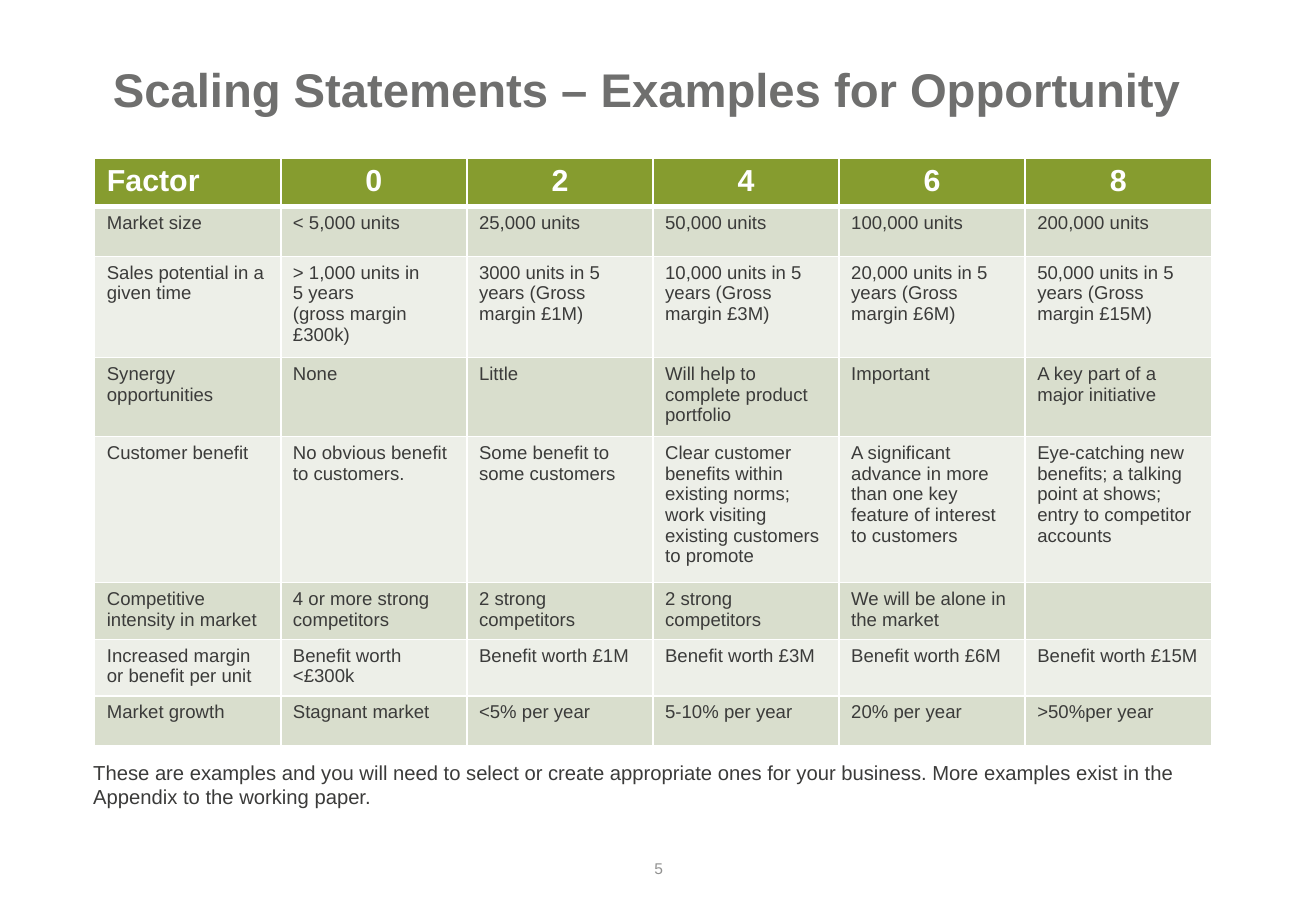
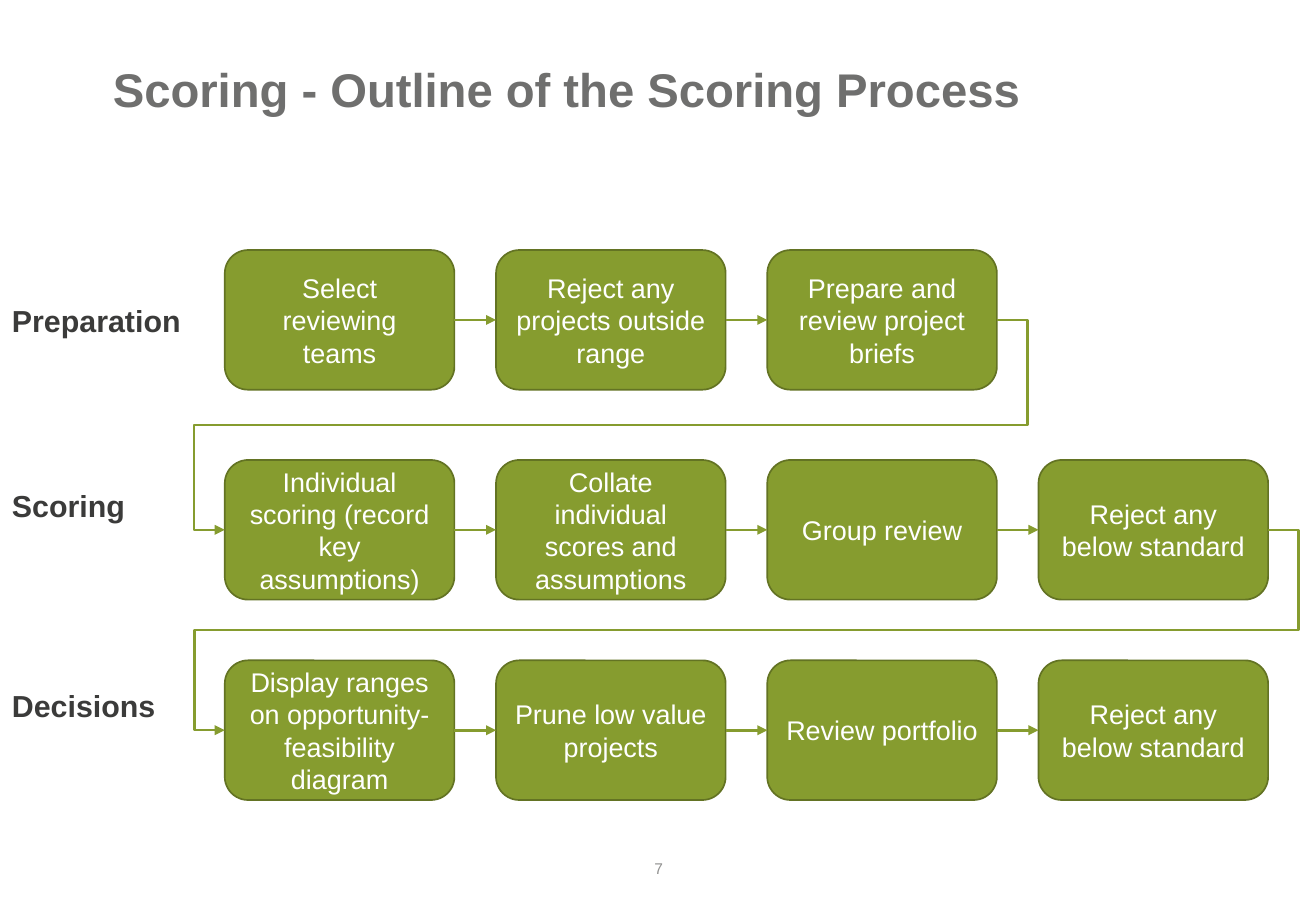
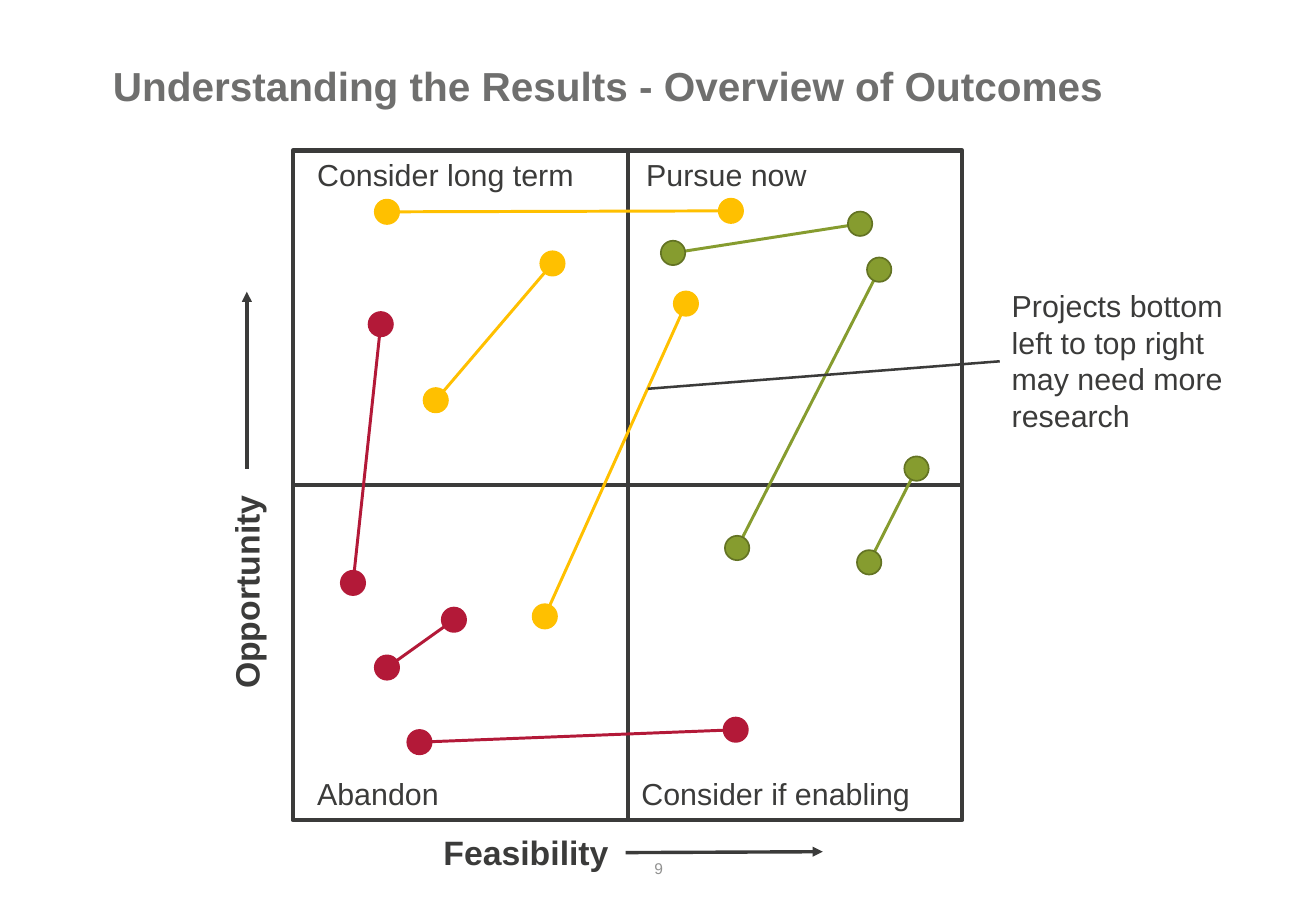
"""Build three slides on scoring projects by opportunity and feasibility."""
import math
from dataclasses import dataclass

import pptx
import pptx.dml.color
import pptx.enum.shapes
import pptx.enum.text
import pptx.oxml
import pptx.oxml.ns
import pptx.presentation
import pptx.shapes.autoshape
import pptx.shapes.base
import pptx.shapes.connector
import pptx.slide
import pptx.table
import pptx.text.text
import pptx.util

Cm = pptx.util.Cm
Pt = pptx.util.Pt
Align = pptx.enum.text.PP_ALIGN
Anchor = pptx.enum.text.MSO_ANCHOR
Preset = pptx.enum.shapes.MSO_SHAPE
Route = pptx.enum.shapes.MSO_CONNECTOR
qn = pptx.oxml.ns.qn

FONT = "Arial"
GREEN, DARK_GREEN = "869C2F", "637323"
AMBER, RED = "FFC000", "B31938"
INK, TITLE_GREY, NUMBER_GREY, WHITE = "3B3B3A", "6F6F6E", "929291", "FFFFFF"
BANDS = ("EDEFE8", "D9DECD")
TOP, LEFT, BOTTOM, RIGHT = range(4)
SITES = ((0.5, 0), (0, 0.5), (0.5, 1), (1, 0.5))


@dataclass(frozen=True)
class TextStyle:
    size: float
    colour: str = INK
    bold: bool = False
    align: Align = Align.LEFT


@dataclass(frozen=True)
class Stroke:
    colour: str
    width: float
    arrow: bool = False


@dataclass(frozen=True)
class Label:
    text: str
    left: float
    top: float
    width: float
    height: float
    style: TextStyle
    rotation: float = 0


@dataclass(frozen=True)
class Stage:
    name: str
    label_top: float
    box_top: float
    steps: tuple[str, ...]


@dataclass(frozen=True)
class Project:
    colour: str
    low: tuple[float, float]
    high: tuple[float, float]


HEADER = TextStyle(18, WHITE, True)
HEADER_CENTRED = TextStyle(18, WHITE, True, Align.CENTER)
CELL = TextStyle(11)
STEP = TextStyle(16, WHITE, align=Align.CENTER)
STAGE_NAME = TextStyle(18, bold=True)
QUADRANT = TextStyle(18)
AXIS = TextStyle(20, bold=True)
PAGE_NUMBER = TextStyle(9.2, NUMBER_GREY, align=Align.CENTER)

COLUMN_WIDTH = 3.89
ROW_HEIGHTS = (1.02, 1.04, 1.97, 1.56, 2.84, 1.12, 1.12, 1.04)
FACTORS = (
    ("Factor", "0", "2", "4", "6", "8"),
    ("Market size", "< 5,000 units", "25,000 units", "50,000 units",
     "100,000 units", "200,000 units"),
    ("Sales potential in a given time",
     "> 1,000 units in\n5 years\n(gross margin\n£300k)",
     "3000 units in 5 years (Gross margin £1M)",
     "10,000 units in 5 years (Gross margin £3M)",
     "20,000 units in 5 years (Gross margin £6M)",
     "50,000 units in 5 years (Gross margin £15M)"),
    ("Synergy opportunities", "None", "Little",
     "Will help to complete product portfolio", "Important",
     "A key part of a major initiative"),
    ("Customer benefit", "No obvious benefit to customers.",
     "Some benefit to some customers",
     "Clear customer benefits within existing norms; "
     "work visiting existing customers to promote",
     "A significant advance in more than one key feature "
     "of interest to customers",
     "Eye-catching new benefits; a talking point at shows; "
     "entry to competitor accounts"),
    ("Competitive intensity in market", "4 or more strong competitors",
     "2 strong competitors", "2 strong competitors",
     "We will be alone in the market", ""),
    ("Increased margin or benefit per unit", "Benefit worth <£300k",
     "Benefit worth £1M", "Benefit worth £3M", "Benefit worth £6M",
     "Benefit worth £15M"),
    ("Market growth", "Stagnant market", "<5% per year", "5-10% per year",
     "20% per year", ">50%per year"),
)

STEP_LEFT, STEP_PITCH, STEP_WIDTH, STEP_HEIGHT = 4.7, 5.67, 4.8, 2.92
ELBOW_STUB = 0.64
STAGES = (
    Stage("Preparation", 6.2, 5.23,
          ("Select reviewing teams", "Reject any projects outside range",
           "Prepare and review project briefs")),
    Stage("Scoring", 10.06, 9.62,
          ("Individual scoring (record key assumptions)",
           "Collate individual scores and assumptions", "Group review",
           "Reject any below standard")),
    Stage("Decisions", 14.25, 13.81,
          ("Display ranges on opportunity-feasibility diagram",
           "Prune low value projects", "Review portfolio",
           "Reject any below standard")),
)

MATRIX_LEFT, MATRIX_TOP, MATRIX_SIDE = 6.12, 3.15, 14
DOT = 0.51
PROJECTS = (
    Project(GREEN, (14.07, 5.29), (17.98, 4.68)),
    Project(GREEN, (15.41, 11.46), (18.38, 5.64)),
    Project(GREEN, (18.17, 11.76), (19.16, 9.8)),
    Project(AMBER, (8.09, 4.43), (15.28, 4.41)),
    Project(AMBER, (9.11, 8.37), (11.55, 5.51)),
    Project(AMBER, (11.39, 12.89), (14.34, 6.35)),
    Project(RED, (7.38, 12.19), (7.96, 6.78)),
    Project(RED, (8.09, 13.96), (9.49, 12.96)),
    Project(RED, (8.77, 15.52), (15.38, 15.26)),
)
MATRIX_LABELS = (
    Label("Opportunity", 2.64, 11.58, 5.03, 1.12, AXIS, 270),
    Label("Feasibility", 9.02, 17.27, 4.39, 1.12, AXIS),
    Label("Abandon", 6.38, 16.08, 3.99, 1.02, QUADRANT),
    Label("Consider long term", 6.38, 3.15, 6.25, 1.02, QUADRANT),
    Label("Pursue now", 13.26, 3.15, 6.25, 1.02, QUADRANT),
    Label("Consider if enabling", 13.16, 16.08, 6.25, 1.02, QUADRANT),
)


def rgb(colour: str) -> pptx.dml.color.RGBColor:
    return pptx.dml.color.RGBColor.from_string(colour)


def write(frame: pptx.text.text.TextFrame, text: str, style: TextStyle) -> None:
    frame.text = text
    for paragraph in frame.paragraphs:
        paragraph.alignment = style.align
        paragraph.font.name = FONT
        paragraph.font.size = Pt(style.size)
        paragraph.font.bold = style.bold
        paragraph.font.color.rgb = rgb(style.colour)


def add_label(slide: pptx.slide.Slide, label: Label) -> pptx.shapes.autoshape.Shape:
    shape = slide.shapes.add_textbox(Cm(label.left), Cm(label.top),
                                     Cm(label.width), Cm(label.height))
    shape.rotation = label.rotation
    shape.text_frame.word_wrap = True
    write(shape.text_frame, label.text, label.style)
    return shape


def add_box(slide: pptx.slide.Slide, preset: Preset, left: float, top: float,
            width: float, height: float, fill: str | None,
            outline: Stroke) -> pptx.shapes.autoshape.Shape:
    shape = slide.shapes.add_shape(preset, Cm(left), Cm(top), Cm(width), Cm(height))
    shape.shadow.inherit = False
    if fill:
        shape.fill.solid()
        shape.fill.fore_color.rgb = rgb(fill)
    else:
        shape.fill.background()
    shape.line.color.rgb = rgb(outline.colour)
    shape.line.width = Pt(outline.width)
    return shape


def add_line(slide: pptx.slide.Slide, start: tuple[float, float],
             end: tuple[float, float], stroke: Stroke,
             route: Route = Route.STRAIGHT) -> pptx.shapes.connector.Connector:
    connector = slide.shapes.add_connector(route, Cm(start[0]), Cm(start[1]),
                                           Cm(end[0]), Cm(end[1]))
    connector.line.color.rgb = rgb(stroke.colour)
    connector.line.width = Pt(stroke.width)
    properties = connector._element.spPr
    if stroke.arrow:
        tail = pptx.oxml.ns.qn("a:tailEnd")
        outline = properties.find(qn("a:ln"))
        outline.append(outline.makeelement(tail, {"type": "triangle"}))
    properties.append(properties.makeelement(qn("a:effectLst"), {}))
    return connector


def site_point(shape: pptx.shapes.base.BaseShape, site: int) -> tuple[float, float]:
    across, down = SITES[site]
    return (pptx.util.Length(shape.left + shape.width * across).cm,
            pptx.util.Length(shape.top + shape.height * down).cm)


def join(slide: pptx.slide.Slide, first: pptx.shapes.base.BaseShape, first_site: int,
         last: pptx.shapes.base.BaseShape, last_site: int, stroke: Stroke,
         route: Route = Route.STRAIGHT) -> pptx.shapes.connector.Connector:
    connector = add_line(slide, site_point(first, first_site),
                         site_point(last, last_site), stroke, route)
    connector.begin_connect(first, first_site)
    connector.end_connect(last, last_site)
    return connector


def wrap_around(connector: pptx.shapes.connector.Connector, stub: float) -> None:
    geometry = connector._element.spPr.find(qn("a:prstGeom"))
    geometry.set("prst", "bentConnector5")
    overshoot = round(100000 * Cm(stub) / connector.width)
    guides = geometry.find(qn("a:avLst"))
    for number, value in enumerate((-overshoot, 50000, 100000 + overshoot), 1):
        guides.append(guides.makeelement(
            qn("a:gd"), {"name": f"adj{number}", "fmla": f"val {value}"}))


def add_slide(presentation: pptx.presentation.Presentation, title: str,
              number: int, title_size: float = 28) -> pptx.slide.Slide:
    slide = presentation.slides.add_slide(presentation.slide_layouts[6])
    heading = add_label(slide, Label(title, 2.36, 1.27, 23.29, 1.27,
                                     TextStyle(title_size, TITLE_GREY, True)))
    heading.text_frame.margin_left = 0
    heading.text_frame.paragraphs[0].line_spacing = 0.9
    page = add_label(slide, Label(str(number), 10.67, 17.65, 6.2, 1.02, PAGE_NUMBER))
    page.text_frame.vertical_anchor = Anchor.MIDDLE
    return slide


def style_cell(cell: pptx.table._Cell, fill: str, top: float, bottom: float) -> None:
    properties = cell._tc.get_or_add_tcPr()
    for side, width in (("L", 1), ("R", 1), ("T", top), ("B", bottom)):
        border = properties.makeelement(qn(f"a:ln{side}"), {"w": str(Pt(width))})
        solid = border.makeelement(qn("a:solidFill"), {})
        solid.append(solid.makeelement(qn("a:srgbClr"), {"val": WHITE}))
        border.append(solid)
        properties.append(border)
    cell.fill.solid()
    cell.fill.fore_color.rgb = rgb(fill)


def build_factors(presentation: pptx.presentation.Presentation) -> None:
    slide = add_slide(presentation, "Scaling Statements – Examples for Opportunity", 5)
    columns = len(FACTORS[0])
    table = slide.shapes.add_table(len(FACTORS), columns, Cm(1.98), Cm(3.3),
                                   Cm(COLUMN_WIDTH * columns),
                                   Cm(sum(ROW_HEIGHTS))).table
    for column in table.columns:
        column.width = Cm(COLUMN_WIDTH)
    for row, (texts, height) in enumerate(zip(FACTORS, ROW_HEIGHTS)):
        table.rows[row].height = Cm(height)
        for column, text in enumerate(texts):
            cell = table.cell(row, column)
            style_cell(cell, BANDS[row % 2] if row else GREEN,
                       3 if row == 1 else 1, 3 if row == 0 else 1)
            heading = HEADER_CENTRED if column else HEADER
            write(cell.text_frame, text, CELL if row else heading)
    add_label(slide, Label(
        "These are examples and you will need to select or create appropriate ones "
        "for your business. More examples exist in the Appendix to the working paper.",
        1.7, 15.77, 23.62, 1.27, TextStyle(12)))


def build_process(presentation: pptx.presentation.Presentation) -> None:
    slide = add_slide(presentation, "Scoring - Outline of the Scoring Process", 7)
    arrow = Stroke(GREEN, 1.5, True)
    previous = None
    for stage in STAGES:
        add_label(slide, Label(stage.name, 0, stage.label_top, 4.7, 1.02, STAGE_NAME))
        for position, text in enumerate(stage.steps):
            step = add_box(slide, Preset.ROUNDED_RECTANGLE,
                           STEP_LEFT + position * STEP_PITCH, stage.box_top,
                           STEP_WIDTH, STEP_HEIGHT, GREEN, Stroke(DARK_GREEN, 1))
            step.text_frame.vertical_anchor = Anchor.MIDDLE
            write(step.text_frame, text, STEP)
            if previous is not None:
                route = Route.STRAIGHT if position else Route.ELBOW
                connector = join(slide, previous, RIGHT, step, LEFT, arrow, route)
                if route == Route.ELBOW:
                    wrap_around(connector, ELBOW_STUB)
            previous = step


def add_project(slide: pptx.slide.Slide, project: Project) -> None:
    (low_x, low_y), (high_x, high_y) = project.low, project.high
    length = math.dist(project.low, project.high)
    step_x = (high_x - low_x) / length * DOT / 2
    step_y = (high_y - low_y) / length * DOT / 2
    add_line(slide, (low_x + step_x, low_y + step_y),
             (high_x - step_x, high_y - step_y), Stroke(project.colour, 1.75))
    edge = DARK_GREEN if project.colour == GREEN else project.colour
    for x, y in (project.low, project.high):
        add_box(slide, Preset.OVAL, x - DOT / 2, y - DOT / 2, DOT, DOT,
                project.colour, Stroke(edge, 1))


def build_outcomes(presentation: pptx.presentation.Presentation) -> None:
    slide = add_slide(presentation, "Understanding the Results - Overview of Outcomes",
                      9, 24)
    matrix = add_box(slide, Preset.RECTANGLE, MATRIX_LEFT, MATRIX_TOP,
                     MATRIX_SIDE, MATRIX_SIDE, None, Stroke(INK, 2.5))
    join(slide, matrix, TOP, matrix, BOTTOM, Stroke(INK, 2.25))
    join(slide, matrix, LEFT, matrix, RIGHT, Stroke(INK, 2.5))
    for project in PROJECTS:
        add_project(slide, project)
    for label in MATRIX_LABELS:
        add_label(slide, label)
    axis_arrow = Stroke(INK, 2, True)
    add_line(slide, (5.16, 9.8), (5.16, 6.1), axis_arrow)
    add_line(slide, (13.08, 17.83), (17.2, 17.81), axis_arrow)
    remark = add_label(slide, Label(
        "Projects bottom left to top right may need more research",
        20.9, 5.89, 4.95, 3.33, QUADRANT))
    pointer = add_line(slide, (13.54, 8.13), site_point(remark, LEFT), Stroke(INK, 1.5))
    pointer.end_connect(remark, LEFT)


def main() -> None:
    presentation = pptx.Presentation()
    presentation.slide_width = Cm(27.51)
    presentation.slide_height = Cm(19.05)
    build_factors(presentation)
    build_process(presentation)
    build_outcomes(presentation)
    presentation.save("out.pptx")


if __name__ == "__main__":
    main()
